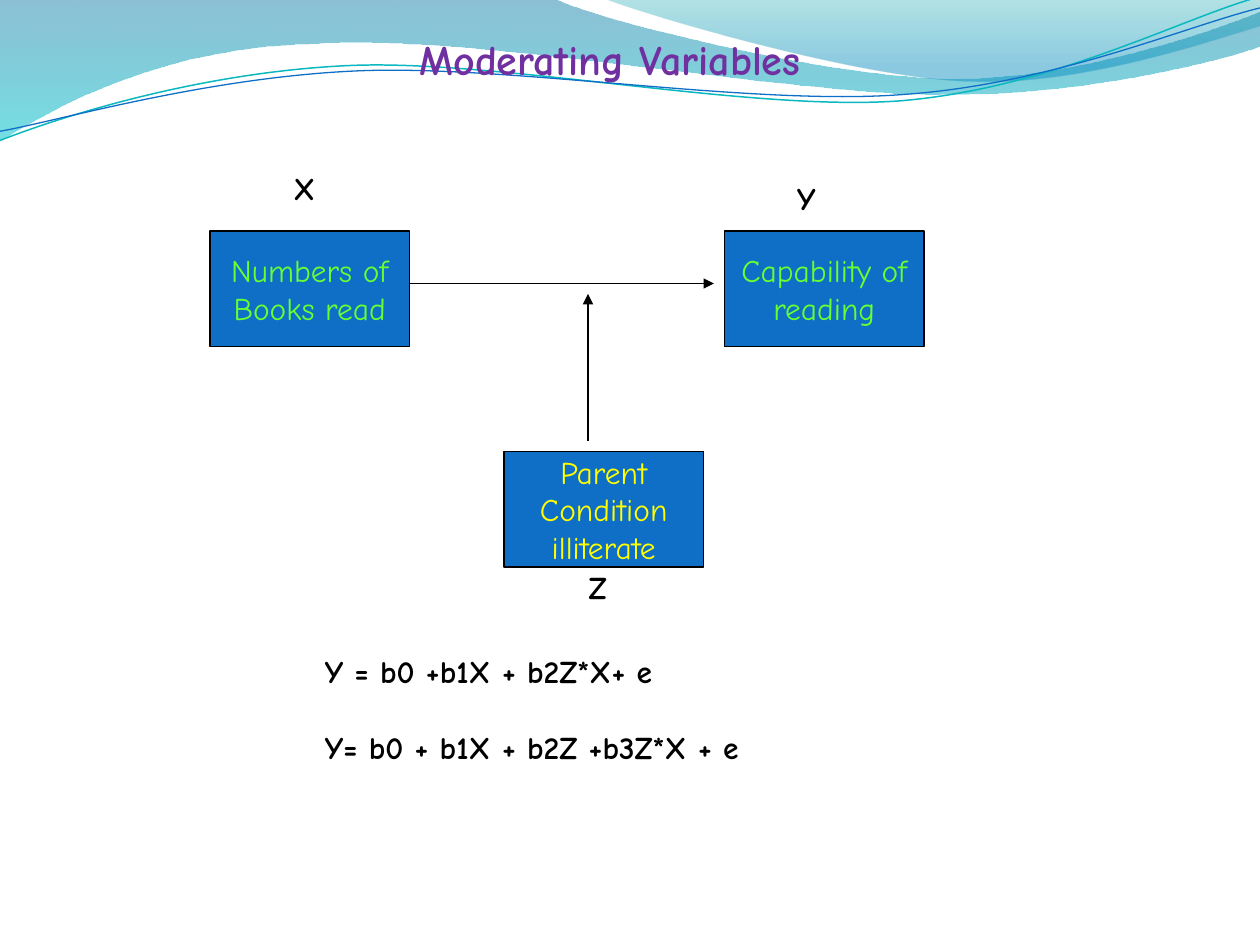
import math

import pptx
import pptx.dml.color
import pptx.enum.shapes
import pptx.enum.text
import pptx.oxml
import pptx.oxml.ns
import pptx.util

COLORS = {
    "blue": "0F6FC6",
    "teal": "0AB8BF",
    "black": "000000",
    "green": "66FF33",
    "yellow": "FFFF00",
    "purple": "7030A0",
    "deep_sea": "0074A1",
    "aqua": "00C6CF",
    "lagoon": "00A1A9",
    "sky": "008BBF",
}
ALIGN = pptx.enum.text.PP_ALIGN
ANCHOR = pptx.enum.text.MSO_ANCHOR
SPACE = pptx.oxml.ns.nsdecls("a")
TILT = 2.7
RIPPLE_CENTER = (479, 56)


def px(length):
    return pptx.util.Emu(round(length * 914400 / 96))


def rgb(name):
    return pptx.dml.color.RGBColor.from_string(COLORS[name])


def turn(point):
    angle = math.radians(TILT)
    x, y = (value - center for value, center in zip(point, RIPPLE_CENTER))
    return (RIPPLE_CENTER[0] + x * math.cos(angle) - y * math.sin(angle),
            RIPPLE_CENTER[1] + x * math.sin(angle) + y * math.cos(angle))


def write_text(frame, text, font="Comic Neue", size=18, color="black", bold=False,
               align=ALIGN.LEFT, anchor=ANCHOR.TOP, gap=0):
    frame.word_wrap = False
    frame.auto_size = pptx.enum.text.MSO_AUTO_SIZE.NONE
    frame.vertical_anchor = anchor
    for index, line in enumerate(text.split("\n")):
        para = frame.add_paragraph() if index else frame.paragraphs[0]
        para.alignment = align
        para.line_spacing = 1.0
        para.space_before = pptx.util.Pt(gap if index else 0)
        span = para.add_run()
        span.text = line
        span.font.name = font
        span.font.size = pptx.util.Pt(size)
        span.font.bold = bold
        span.font.color.rgb = rgb(color)


class Page:
    def __init__(self, deck):
        self.slide = deck.slides.add_slide(deck.slide_layouts[5])
        self.shapes = self.slide.shapes

    def title(self, text, left, top, width, height):
        box = self.shapes.title
        box.left, box.top, box.width, box.height = map(px, (left, top, width, height))
        write_text(box.text_frame, text, size=24, color="purple", bold=True)
        self.shapes._spTree.append(box._element)

    def outline(self, start, segments, close):
        builder = self.shapes.build_freeform(*map(px, start), scale=1.0)
        builder.add_line_segments([tuple(map(px, segment[-1])) for segment in segments], close=close)
        shape = builder.convert_to_shape()
        shape.shadow.inherit = False
        steps = list(shape._element.spPr.iter(pptx.oxml.ns.qn("a:lnTo")))
        for step, segment in zip(steps, segments):
            if len(segment) == 3:
                step.tag = pptx.oxml.ns.qn("a:cubicBezTo")
                for index, (x, y) in enumerate(segment[:2]):
                    step.insert(index, pptx.oxml.parse_xml(
                        f'<a:pt {SPACE} x="{px(x) - shape.left}" y="{px(y) - shape.top}"/>'))
        return shape

    def wave(self, start, segments, stops):
        shape = self.outline(start, segments, True)
        shape.line.fill.background()
        shape.fill.gradient()
        shape.fill.gradient_angle = 270
        for stop, (position, color, opacity) in zip(shape.fill.gradient_stops, stops):
            stop.position = position
            stop.color.rgb = rgb(color)
        tints = shape._element.spPr.iter(pptx.oxml.ns.qn("a:srgbClr"))
        for tint, (position, color, opacity) in zip(tints, stops):
            tint.append(pptx.oxml.parse_xml(f'<a:alpha {SPACE} val="{opacity * 1000}"/>'))

    def ripple(self, start, segments, color, weight):
        turned = [[turn(point) for point in segment] for segment in segments]
        shape = self.outline(turn(start), turned, False)
        shape.rotation = 360 - TILT
        shape.fill.background()
        shape.line.color.rgb = rgb(color)
        shape.line.width = pptx.util.Pt(weight)

    def variable(self, text, left, top, color):
        box = self.shapes.add_shape(pptx.enum.shapes.MSO_SHAPE.RECTANGLE,
                                    *map(px, (left, top, 152, 88)))
        box.shadow.inherit = False
        box.fill.solid()
        box.fill.fore_color.rgb = rgb("blue")
        box.line.color.rgb = rgb("black")
        box.line.width = pptx.util.Pt(0.75)
        write_text(box.text_frame, text, color=color, align=ALIGN.CENTER, anchor=ANCHOR.MIDDLE)

    def arrow(self, *ends):
        line = self.shapes.add_connector(pptx.enum.shapes.MSO_CONNECTOR.STRAIGHT, *map(px, ends))
        line.line.color.rgb = rgb("black")
        line.line.width = pptx.util.Pt(0.75)
        line.line._get_or_add_ln().append(
            pptx.oxml.parse_xml(f'<a:tailEnd {SPACE} type="triangle"/>'))
        line._element.spPr.append(pptx.oxml.parse_xml(f'<a:effectLst {SPACE}/>'))

    def label(self, text, left, top, width, height, gap=0):
        box = self.shapes.add_textbox(*map(px, (left, top, width, height)))
        write_text(box.text_frame, text, bold=True, gap=gap)


def main():
    deck = pptx.Presentation()
    deck.slide_width, deck.slide_height = px(960), px(720)
    page = Page(deck)

    page.wave((0, 0), [
        [(422, -1)],
        [(457, 16), (637, 60), (728, 60)],
        [(819, 60), (920, 25), (960, 9)],
        [(961, 35)],
        [(944, 42), (835, 73), (716, 72)],
        [(597, 72), (367, 27), (247, 33)],
        [(124, 35), (44, 80), (-1, 108)],
    ], [(0, "deep_sea", 45), (1, "aqua", 55)])
    page.wave((460, -1), [
        [(489, 11), (655, 60), (738, 62)],
        [(822, 66), (923, 31), (960, 20)],
        [(960, 0)],
    ], [(0, "lagoon", 30), (0.8, "sky", 45)])
    page.ripple((0, 107), [
        [(46, 89), (152, 55), (266, 50)],
        [(379, 45), (569, 85), (684, 77)],
        [(800, 68), (900, 14), (958, -2)],
    ], "teal", 0.85)
    page.ripple((0, 100), [
        [(45, 92), (157, 59), (272, 54)],
        [(387, 49), (573, 81), (688, 72)],
        [(803, 64), (903, 20), (960, 6)],
    ], "blue", 0.75)

    page.variable("Numbers of\nBooks read", 160, 176, "green")
    page.variable("Parent\nCondition\nilliterate", 384, 344, "yellow")
    page.variable("Capability of\nreading", 552, 176, "green")
    page.arrow(312, 216, 544, 216)
    page.arrow(448, 336, 448, 224)

    page.label("X", 214, 124, 36, 38)
    page.label("Y", 598, 132, 35, 38)
    page.label("Z", 439, 428, 36, 38)
    page.label("Y = b0 +b1X + b2Z*X+ e\nY= b0 + b1X + b2Z +b3Z*X + e",
               238, 492, 404, 97, gap=21.7)
    page.title("Moderating Variables", 310, 21, 348, 48)

    deck.save("out.pptx")


if __name__ == "__main__":
    main()
